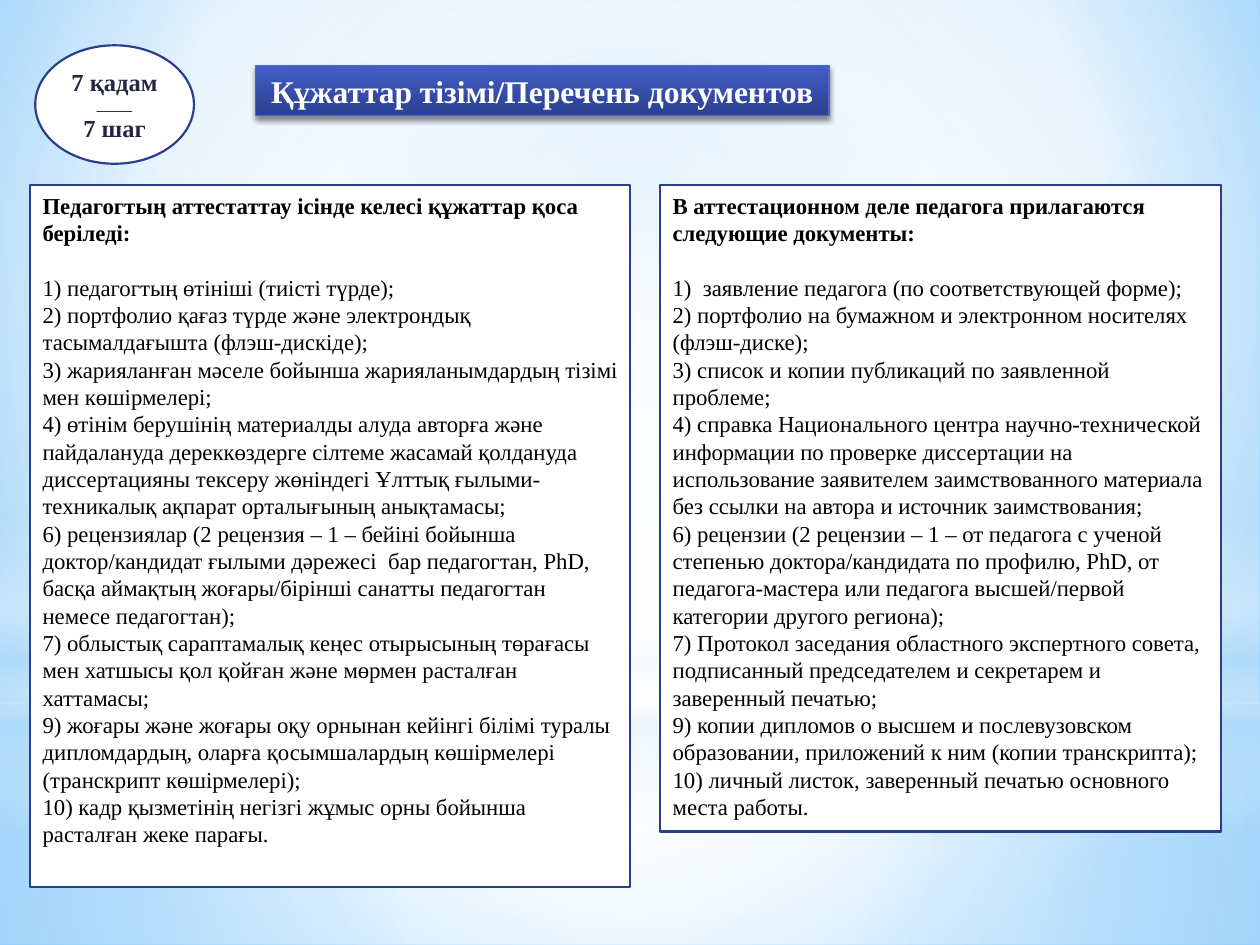
from lxml.etree import SubElement
from pptx import Presentation
from pptx.dml.color import RGBColor
from pptx.enum.shapes import MSO_SHAPE
from pptx.enum.text import MSO_ANCHOR, PP_ALIGN
from pptx.oxml import parse_xml
from pptx.oxml.ns import nsdecls, qn
from pptx.util import Inches, Pt

COLORS = {"white": "FFFFFF", "black": "000000", "navy": "212745", "border": "2A3E8E",
          "banner_top": "435EC5", "banner_bottom": "2B4092", "banner_line": "4E67C8",
          "glow": "B4DCFA", "sky": "9ED5FF", "deep_sky": "5BB9FF"}
LINEAR = '<a:lin ang="5400000" scaled="0"/>'
RADIAL = '<a:path path="circle"><a:fillToRect l="{}" t="{}" r="{}" b="{}"/></a:path>'
CENTER = RADIAL.format(*[50000] * 4)


def set_gradient(fill, owner, stops, direction):
    """Fill with (position %, colour name, opacity %) stops; owner holds the fill's XML."""
    fill.solid()
    stop_xml = "".join(
        f'<a:gs pos="{position * 1000}"><a:srgbClr val="{COLORS[color]}">'
        f'<a:alpha val="{opacity * 1000}"/></a:srgbClr></a:gs>'
        for position, color, opacity in stops)
    gradient = parse_xml(f'<a:gradFill {nsdecls("a")} rotWithShape="1">'
                         f'<a:gsLst>{stop_xml}</a:gsLst>{direction}</a:gradFill>')
    owner.replace(owner.find(qn("a:solidFill")), gradient)


def add_box(kind, place, line_color=None, line_width=1.25, lines=(), align=PP_ALIGN.LEFT):
    """Add a white shape with (text, size, bold, colour name) lines."""
    box = page.shapes.add_shape(kind, *[Inches(value) for value in place])
    box.shadow.inherit = False
    box.fill.solid()
    box.fill.fore_color.rgb = RGBColor.from_string(COLORS["white"])
    if line_color:
        box.line.color.rgb = RGBColor.from_string(COLORS[line_color])
        box.line.width = Pt(line_width)
    else:
        box.line.fill.background()
    frame = box.text_frame
    frame.word_wrap = True
    frame.vertical_anchor = MSO_ANCHOR.TOP
    frame.text = "\n".join(line[0] for line in lines)
    for para, (_, size, bold, color) in zip(frame.paragraphs, lines):
        para.alignment = align
        for span in para.runs:
            span.font.name = "Times New Roman"
            span.font.size = Pt(size)
            span.font.bold = bold
            span.font.color.rgb = RGBColor.from_string(COLORS[color])
    return box


deck = Presentation()
deck.slide_width, deck.slide_height = Inches(10), Inches(7.5)
page = deck.slides.add_slide(deck.slide_layouts[6])

# Background and its soft light layers
background_fill = page.background.fill
background_fill.solid()
set_gradient(background_fill, page.element.find(".//" + qn("p:bgPr")),
             [(0, "sky", 100), (60, "white", 100), (100, "deep_sky", 100)],
             RADIAL.format(20000, 10000, 20000, 60000))
light_layers = [
    (MSO_SHAPE.RECTANGLE, (0, 5.58, 10, 1.92), CENTER,
     [(0, "white", 91), (37, "white", 76), (100, "glow", 79)]),
    (MSO_SHAPE.RECTANGLE, (0, 0, 10, 5.58), CENTER,
     [(0, "white", 89), (48, "white", 62), (100, "glow", 79)]),
    (MSO_SHAPE.RECTANGLE, (0, 4.12, 10, 2.5), LINEAR,
     [(0, "white", 0), (29, "white", 30), (45, "glow", 40),
      (55, "white", 26), (65, "glow", 60), (100, "white", 0)]),
    (MSO_SHAPE.OVAL, (0, 1.75, 10, 5.58), CENTER,
     [(0, "white", 100), (56, "white", 0)]),
]
for kind, place, direction, stops in light_layers:
    layer = add_box(kind, place)
    set_gradient(layer.fill, layer.element.spPr, stops, direction)

# Step badge
badge = add_box(MSO_SHAPE.OVAL, (0.28, 0.36, 1.26, 0.94), "border",
                lines=[("7 қадам", 14, True, "navy"), ("_____", 8, True, "navy"),
                       ("7 шаг", 14, True, "navy")], align=PP_ALIGN.CENTER)
badge.text_frame.vertical_anchor = MSO_ANCHOR.MIDDLE

# Title banner
banner = add_box(MSO_SHAPE.RECTANGLE, (2.03, 0.52, 4.55, 0.4), "banner_line", 0.75,
                 [("Құжаттар тізімі/Перечень документов", 18, True, "white")],
                 PP_ALIGN.CENTER)
banner.text_frame.word_wrap = False
set_gradient(banner.fill, banner.element.spPr,
             [(0, "banner_top", 100), (100, "banner_bottom", 100)], LINEAR)
shadow = SubElement(banner.element.spPr.find(qn("a:effectLst")), qn("a:outerShdw"),
                    blurRad=str(Pt(3.1)), dist=str(Pt(1.8)), dir="5400000", rotWithShape="0")
shadow_color = SubElement(shadow, qn("a:srgbClr"), val=COLORS["black"])
SubElement(shadow_color, qn("a:alpha"), val="45000")

# Document lists: Russian on the right, Kazakh on the left
document_lists = [
    ((5.24, 1.47, 4.45, 5.13), [
        "В аттестационном деле педагога прилагаются следующие документы:",
        "1)  заявление педагога (по соответствующей форме);",
        "2) портфолио на бумажном и электронном носителях (флэш-диске);",
        "3) список и копии публикаций по заявленной проблеме;",
        "4) справка Национального центра научно-технической информации по проверке "
        "диссертации на использование заявителем заимствованного материала без ссылки "
        "на автора и источник заимствования;",
        "6) рецензии (2 рецензии – 1 – от педагога с ученой степенью доктора/кандидата "
        "по профилю, PhD, от педагога-мастера или педагога высшей/первой категории "
        "другого региона);",
        "7) Протокол заседания областного экспертного совета, подписанный председателем "
        "и секретарем и заверенный печатью;",
        "9) копии дипломов о высшем и послевузовском образовании, приложений к ним "
        "(копии транскрипта);",
        "10) личный листок, заверенный печатью основного места работы.",
    ]),
    ((0.24, 1.47, 4.76, 5.57), [
        "Педагогтың аттестаттау ісінде келесі құжаттар қоса беріледі:",
        "1) педагогтың өтініші (тиісті түрде);",
        "2) портфолио қағаз түрде және электрондық тасымалдағышта (флэш-дискіде);",
        "3) жарияланған мәселе бойынша жарияланымдардың тізімі мен көшірмелері;",
        "4) өтінім берушінің материалды алуда авторға және пайдалануда дереккөздерге "
        "сілтеме жасамай қолдануда диссертацияны тексеру жөніндегі Ұлттық "
        "ғылыми-техникалық ақпарат орталығының анықтамасы;",
        "6) рецензиялар (2 рецензия – 1 – бейіні бойынша доктор/кандидат ғылыми "
        "дәрежесі  бар педагогтан, PhD, басқа аймақтың жоғары/бірінші санатты "
        "педагогтан немесе педагогтан);",
        "7) облыстық сараптамалық кеңес отырысының төрағасы мен хатшысы қол қойған "
        "және мөрмен расталған хаттамасы;",
        "9) жоғары және жоғары оқу орнынан кейінгі білімі туралы дипломдардың, оларға "
        "қосымшалардың көшірмелері (транскрипт көшірмелері);",
        "10) кадр қызметінің негізгі жұмыс орны бойынша расталған жеке парағы.",
    ]),
]
for place, (heading, *items) in document_lists:
    lines = [(heading, 13, True, "black")] + [(item, 13, False, "black") for item in items]
    box = add_box(MSO_SHAPE.RECTANGLE, place, "border", lines=lines)
    box.text_frame.paragraphs[0].space_after = Pt(15.6)

deck.save("out.pptx")
